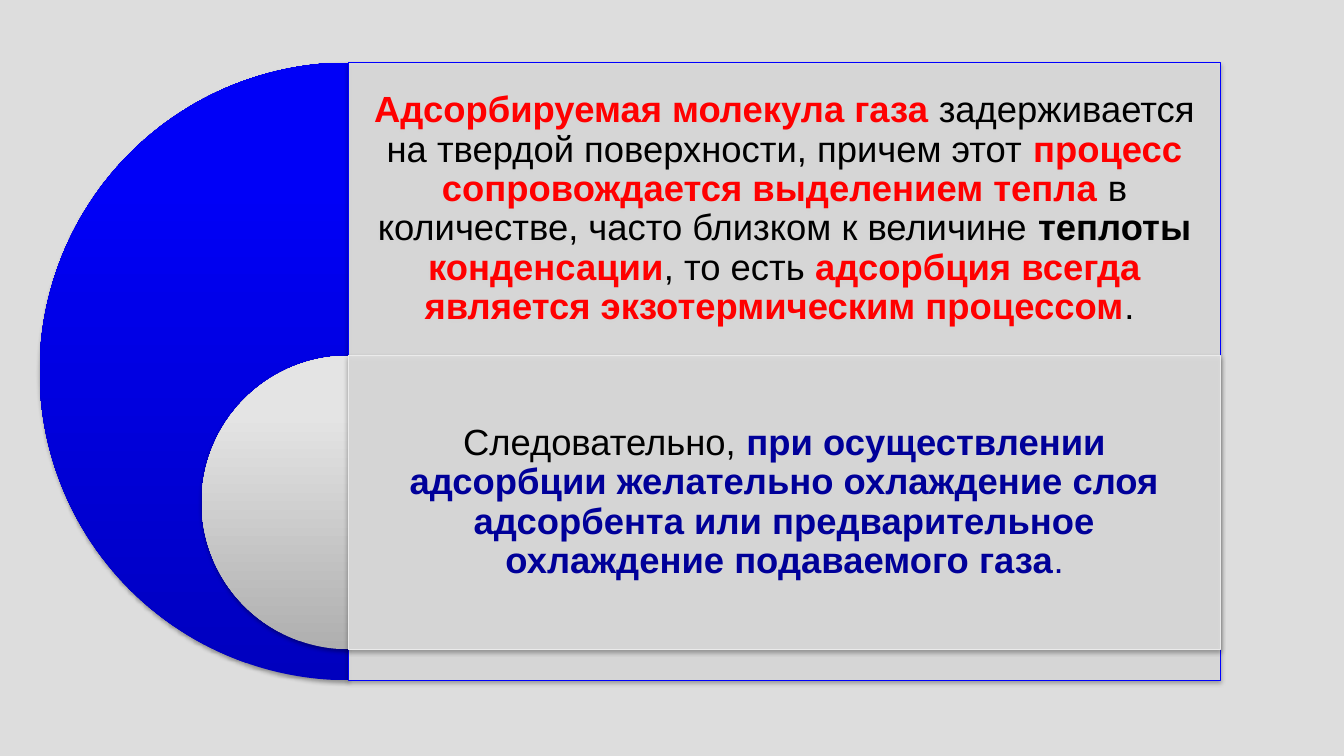
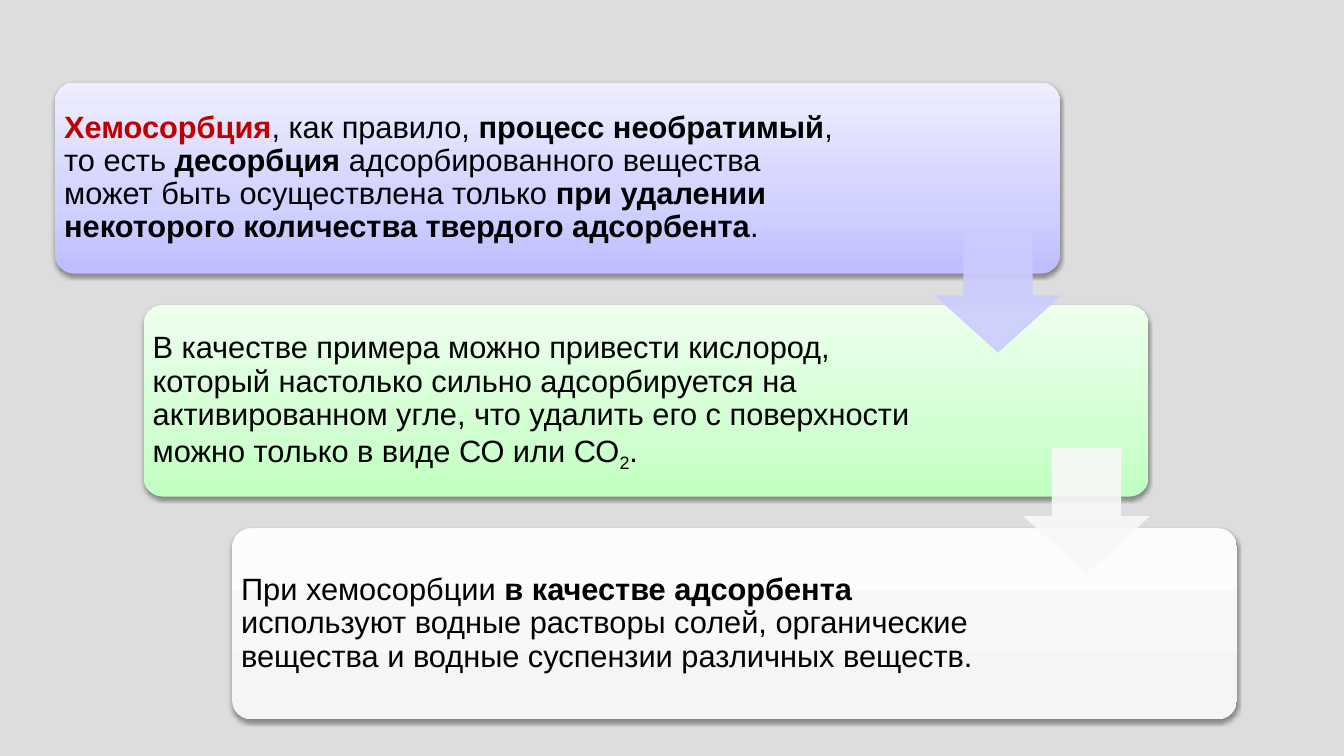
from copy import deepcopy

from lxml import etree
from pptx import Presentation
from pptx.dml.color import RGBColor
from pptx.enum import shapes, text
from pptx.oxml import ns
from pptx.util import Pt

SHAPE = shapes.MSO_SHAPE
RED, CRIMSON, NAVY, BLACK = "FF0000", "C00000", "000099", "000000"
GREY = "DDDDDD"


def color(hex_string):
    return RGBColor.from_string(hex_string)


def add_alpha(element, percent):
    """Make the colour inside a fill or line element partly transparent."""
    for tint in element.iter(ns.qn("a:srgbClr")):
        etree.SubElement(tint, ns.qn("a:alpha"), val=str(percent * 1000))


def span(words, tint=BLACK, bold=False, baseline=0):
    return words, tint, bold, baseline


def write(box, spans, size, align, insets):
    """Fill a shape with one paragraph; insets are left, top, right, bottom."""
    frame = box.text_frame
    frame.word_wrap = True
    frame.vertical_anchor = text.MSO_ANCHOR.MIDDLE
    (frame.margin_left, frame.margin_top,
     frame.margin_right, frame.margin_bottom) = map(Pt, insets)
    para = frame.paragraphs[0]
    para.alignment = align
    para.line_spacing = 0.9
    for words, tint, bold, baseline in spans:
        run = para.add_run()
        run.text = words
        run.font.name = "Arial"
        run.font.size = Pt(size)
        run.font.bold = bold
        run.font.color.rgb = color(tint)
        if baseline:
            run.font._element.set("baseline", str(baseline * 1000))


class Deck:
    """Holds the shared style and the current slide."""

    def __init__(self):
        self.deck = Presentation()
        self.deck.slide_width, self.deck.slide_height = Pt(960), Pt(540)
        background = self.deck.slide_master.background.fill
        background.solid()
        background.fore_color.rgb = color(GREY)
        self.page = None

    def new_page(self):
        self.page = self.deck.slides.add_slide(self.deck.slide_layouts[6])

    def shape(self, kind, left, top, width, height, adjustments=(), shadow=0):
        """Add a lineless shape; shadow is its opacity in percent."""
        box = self.page.shapes.add_shape(
            kind, Pt(left), Pt(top), Pt(width), Pt(height))
        for index, value in enumerate(adjustments):
            box.adjustments[index] = value
        box.line.fill.background()
        box.shadow.inherit = False
        if shadow:
            effects = box._element.spPr.find(ns.qn("a:effectLst"))
            outer = etree.SubElement(
                effects, ns.qn("a:outerShdw"), blurRad=str(Pt(3.1)),
                dist=str(Pt(1.7)), dir="5400000", rotWithShape="0")
            etree.SubElement(outer, ns.qn("a:srgbClr"), val=BLACK)
            add_alpha(outer, shadow)
        return box

    def gradient(self, box, stops):
        """Fill upwards with three (position, colour) stops."""
        box.fill.gradient()
        box.fill.gradient_angle = 90
        stop_list = box._element.spPr.find(".//" + ns.qn("a:gsLst"))
        stop_list.append(deepcopy(stop_list[-1]))
        for stop, (position, tint) in zip(box.fill.gradient_stops, stops):
            stop.position = position
            stop.color.rgb = color(tint)

    def glass(self, box, tint, outline, line_opacity=100):
        """Give a 90 % opaque fill and a thin outline."""
        box.fill.solid()
        box.fill.fore_color.rgb = color(tint)
        add_alpha(box._element.spPr.find(ns.qn("a:solidFill")), 90)
        box.line.color.rgb = color(outline)
        box.line.width = Pt(0.75)
        if line_opacity < 100:
            add_alpha(box.line._get_or_add_ln(), line_opacity)

    def half_disc(self, center, top, size, stops):
        disc = self.shape(SHAPE.PIE, center - size / 2, top, size, size,
                          (54, 162), shadow=35)
        self.gradient(disc, stops)

    def panel(self, left, top, width, height, outline, spans, text_height):
        panel = self.shape(SHAPE.RECTANGLE, left, top, width, height, shadow=35)
        self.glass(panel, GREY, outline)
        inset = 8
        write(panel, spans, 26, text.PP_ALIGN.CENTER,
              (inset, inset, inset, inset + height - text_height))

    def step(self, left, top, width, height, tints, spans, text_width):
        card = self.shape(SHAPE.ROUNDED_RECTANGLE, left, top, width, height,
                          (0.1,), shadow=38)
        self.gradient(card, zip((0, 0.35, 1), tints))
        inset = 2.5
        write(card, spans, 22, text.PP_ALIGN.LEFT,
              (inset, inset, inset + width - text_width, inset))

    def arrow(self, left, top, size, tint):
        arrow = self.shape(SHAPE.DOWN_ARROW, left, top, size, size, (0.55, 0.45))
        self.glass(arrow, tint, tint, line_opacity=90)

    def save(self):
        self.deck.save("out.pptx")


def heat_page(deck):
    deck.new_page()
    left, width = 248.9, 623
    outer_top, outer_size = 44.7, 441.2
    inner_top, inner_size = 254.2, 209.6
    heat = [
        span("Адсорбируемая молекула газа ", RED, True),
        span("задерживается на твердой поверхности, причем этот "),
        span("процесс сопровождается выделением тепла ", RED, True),
        span("в количестве, часто близком к величине "),
        span("теплоты ", bold=True),
        span("конденсации", RED, True),
        span(", то есть "),
        span("адсорбция всегда является экзотермическим процессом", RED, True),
        span(". "),
    ]
    cooling = [
        span("Следовательно, "),
        span("при осуществлении адсорбции желательно охлаждение слоя "
             "адсорбента или предварительное охлаждение подаваемого газа",
             NAVY, True),
        span(".", NAVY),
    ]
    layers = [
        (outer_top, outer_size, ("0000BE", "0000F7", "0000F8"), "0000FF", heat),
        (inner_top, inner_size, ("AFAFAF", "E4E4E4", "E5E5E5"), "EBEBEB", cooling),
    ]
    for top, size, tints, outline, spans in layers:
        deck.half_disc(left, top, size, zip((0, 0.8, 1), tints))
        deck.panel(left, top, width, size, outline, spans, inner_size)


def chemisorption_page(deck):
    deck.new_page()
    left, top, width, height = 39.4, 59, 717.8, 136.5
    shift, drop = 63.2, 159.2
    steps = [
        (("BDBDFF", "D1D1FF", "EEEEFF"), 578, [
            span("Хемосорбция", CRIMSON, True),
            span(", как правило, "),
            span("процесс необратимый", bold=True),
            span(", то есть "),
            span("десорбция", bold=True),
            span(" адсорбированного вещества может быть осуществлена только "),
            span("при удалении некоторого количества твердого адсорбента",
                 bold=True),
            span("."),
        ]),
        (("C0FFC0", "D2FFD2", "EDFFED"), 566, [
            span("В качестве примера можно привести кислород, который "
                 "настолько сильно адсорбируется на активированном угле, что "
                 "удалить его с поверхности можно только в виде СО или СО"),
            span("2", baseline=-25),
            span("."),
        ]),
        (("F5F5F5", "F8F8F8", "FCFCFC"), 566, [
            span("При хемосорбции "),
            span("в качестве адсорбента ", bold=True),
            span("используют водные растворы солей, органические вещества и "
                 "водные суспензии различных веществ."),
        ]),
    ]
    for index, (tints, text_width, spans) in enumerate(steps):
        deck.step(left + index * shift, top + index * drop, width, height,
                  tints, spans, text_width)
    arrow_size = 88.7
    for index, tint in enumerate(("CCCCFF", "F8F8F8")):
        deck.arrow(left + width - arrow_size + index * shift,
                   162.6 + index * 157.7, arrow_size, tint)


def main():
    deck = Deck()
    heat_page(deck)
    chemisorption_page(deck)
    deck.save()


if __name__ == "__main__":
    main()
